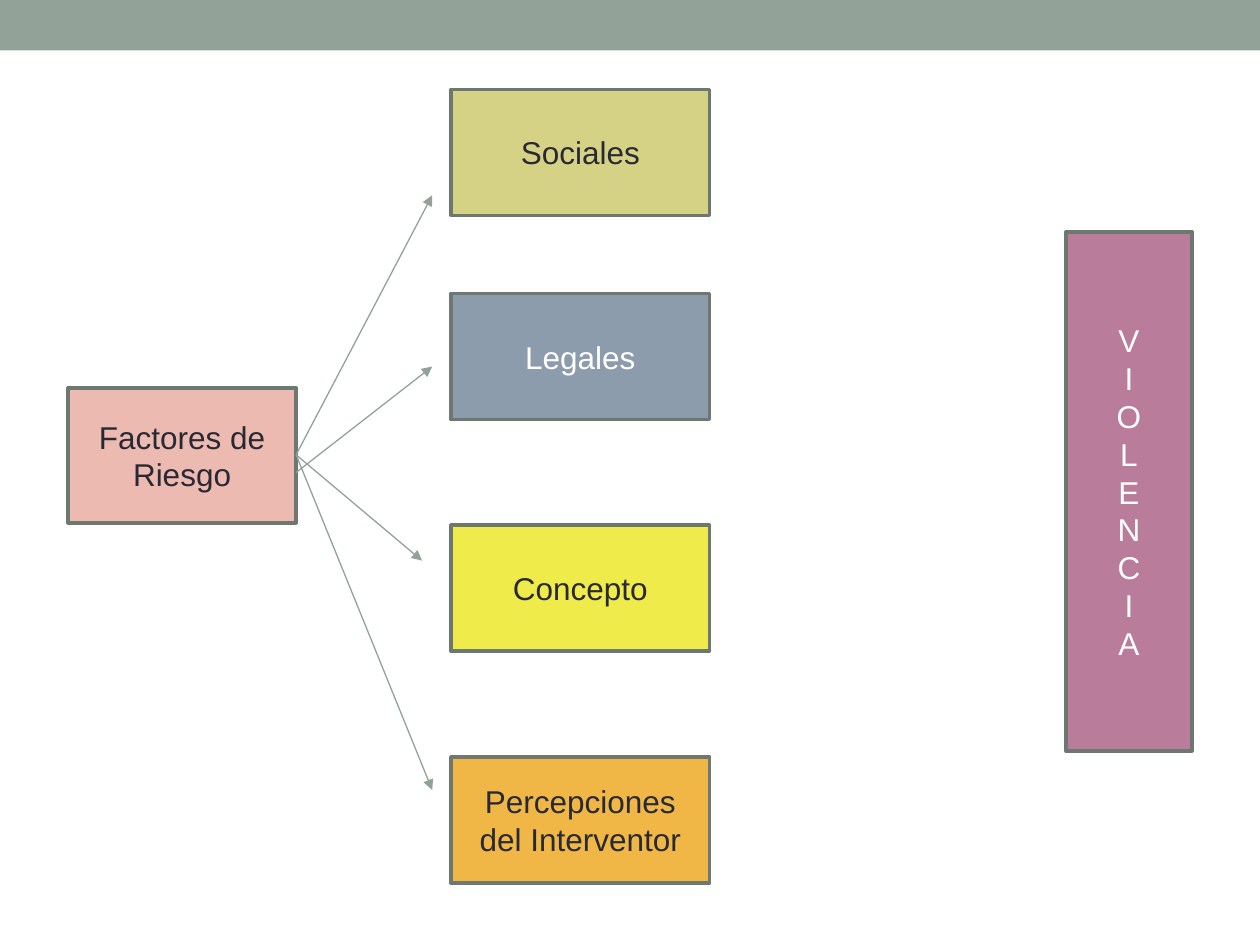
"""Build the slide on risk factors and violence."""
from lxml import etree
from pptx import Presentation
from pptx.dml.color import RGBColor
from pptx.enum.shapes import MSO_CONNECTOR, MSO_SHAPE
from pptx.enum.text import MSO_ANCHOR, PP_ALIGN
from pptx.oxml.ns import qn
from pptx.util import Pt

RECTANGLE = MSO_SHAPE.RECTANGLE
STRAIGHT = MSO_CONNECTOR.STRAIGHT
MIDDLE = MSO_ANCHOR.MIDDLE
CENTER = PP_ALIGN.CENTER

SAGE, BORDER, DARK, WHITE = "93A299", "6D7871", "292934", "FFFFFF"
SLIDE_WIDTH, SLIDE_HEIGHT, BAND_HEIGHT = 720, 540, 28.8

RISK = ("Factores de Riesgo", "EDBAB1", DARK, (38.9, 221.8, 130.3, 77))
VIOLENCE = ("\n".join("VIOLENCIA"), "BA7C9B", WHITE, (609.1, 132.5, 72, 296.6))
FACTOR_LEFT, FACTOR_WIDTH, FACTOR_HEIGHT = 257.8, 147.6, 72
FACTORS = [
    ("Sociales", "D5D286", DARK, 51.1),
    ("Legales", "8C9CAD", WHITE, 167.8),
    ("Concepto", "EFEB4B", DARK, 300.2),
    ("Percepciones del Interventor", "F0B746", DARK, 432.7),
]
ARROW_START = 169.2
ARROWS = [
    (259.9, 247, 111.6),
    (270, 247, 209.5),
    (259.9, 241.2, 320.4),
    (259.9, 247, 451.4),
]


def color(value):
    return RGBColor.from_string(value)


def add_rectangle(slide, fill, bounds):
    rectangle = slide.shapes.add_shape(RECTANGLE, *map(Pt, bounds))
    rectangle.shadow.inherit = False
    rectangle.fill.solid()
    rectangle.fill.fore_color.rgb = color(fill)
    rectangle.line.fill.background()
    return rectangle


def add_box(slide, label, fill, ink, bounds):
    box = add_rectangle(slide, fill, bounds)
    box.line.color.rgb = color(BORDER)
    box.line.width = Pt(2.08)
    frame = box.text_frame
    frame.word_wrap = True
    frame.vertical_anchor = MIDDLE
    frame.text = label
    for paragraph in frame.paragraphs:
        paragraph.alignment = CENTER
        paragraph.font.name = "Arial"
        paragraph.font.size = Pt(18)
        paragraph.font.color.rgb = color(ink)


def add_arrow(slide, start_y, end_x, end_y):
    ends = map(Pt, (ARROW_START, start_y, end_x, end_y))
    arrow = slide.shapes.add_connector(STRAIGHT, *ends)
    arrow.line.color.rgb = color(SAGE)
    arrow.line.width = Pt(0.75)
    properties = arrow.element.spPr
    etree.SubElement(properties.find(qn("a:ln")), qn("a:tailEnd"), type="triangle")
    etree.SubElement(properties, qn("a:effectLst"))


def main():
    deck = Presentation()
    deck.slide_width, deck.slide_height = Pt(SLIDE_WIDTH), Pt(SLIDE_HEIGHT)
    slide = deck.slides.add_slide(deck.slide_layouts[6])
    add_rectangle(slide, SAGE, (0, 0, SLIDE_WIDTH, BAND_HEIGHT))
    add_box(slide, *RISK)
    for label, fill, ink, top in FACTORS:
        bounds = (FACTOR_LEFT, top, FACTOR_WIDTH, FACTOR_HEIGHT)
        add_box(slide, label, fill, ink, bounds)
    add_box(slide, *VIOLENCE)
    for arrow in ARROWS:
        add_arrow(slide, *arrow)
    deck.save("out.pptx")


if __name__ == "__main__":
    main()
